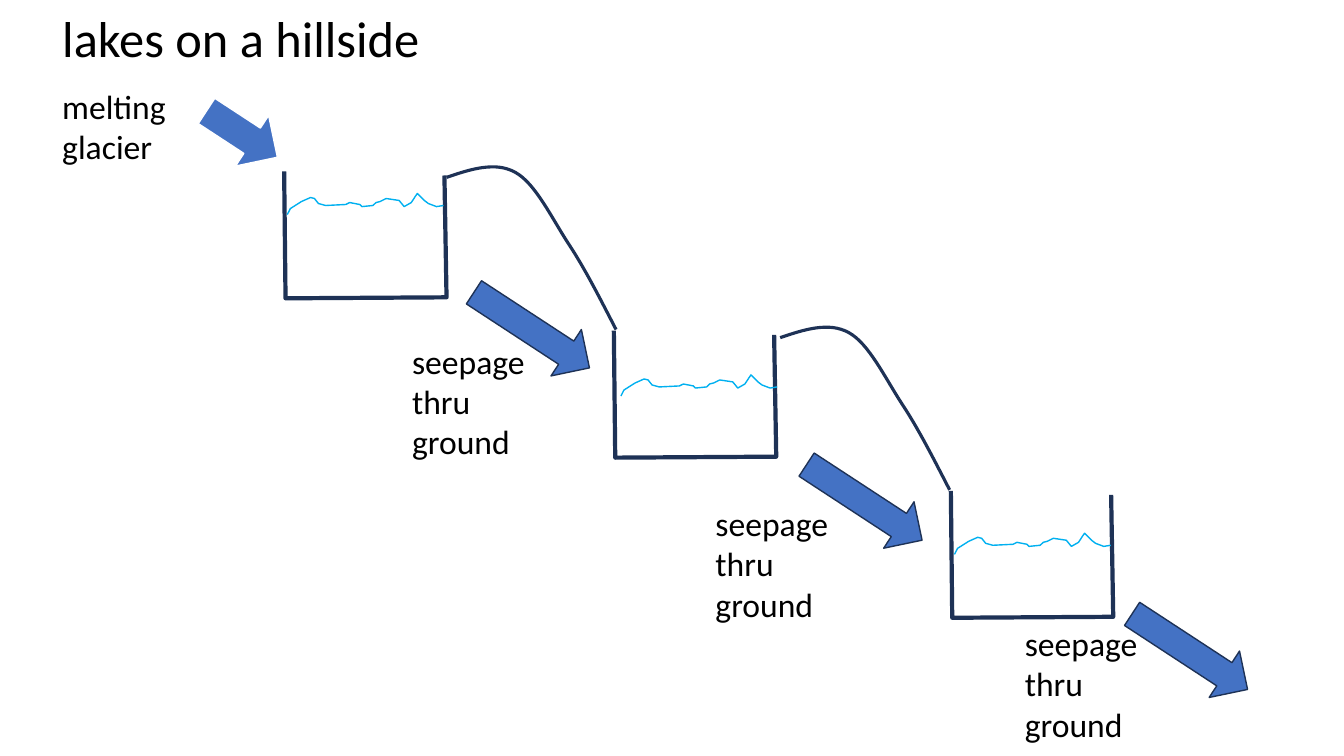
from pptx import Presentation
from pptx.dml.color import RGBColor
from pptx.enum.shapes import MSO_SHAPE as Shape
from pptx.enum.text import MSO_AUTO_SIZE as AutoSize
from pptx.util import Pt

NAVY, BLUE, WATER = "1E3256", "4472C4", "00B0F0"
WHITE, BLACK = "FFFFFF", "000000"

BASIN = [(0, 0), (1, 90.7), (116, 90), (114.5, 3)]
RIPPLES = [
    (0, 15.1), (2.2, 10.8), (10.1, 5.8), (16.6, 2.9), (19.4, 3.6), (22.3, 7.2),
    (27.4, 8.6), (41.8, 7.9), (44.6, 6.5), (51.8, 7.9), (53.3, 9.4), (61.2, 8.6),
    (63.4, 6.5), (66.2, 5.8), (70.6, 3.6), (79.9, 5), (83.5, 9.4), (88.6, 6.5),
    (91.4, 2.2), (92.9, 0), (97.9, 5), (100.8, 7.2), (106.6, 9.4), (111.6, 8.6),
]
STREAM = [
    (0, 0), (17.3, -5.8), (34.6, -11.5), (49, -3.6), (63.4, 4.3),
    (74.9, 28.8), (87.1, 47.5), (99.4, 66.2), (110.2, 87.8), (121, 108.7),
]

BASIN_ORIGINS = [(203, 122.4), (438.5, 236.2), (679.2, 350.6)]
RIPPLE_ORIGINS = [(205.2, 138.2), (443.5, 267.8), (681.8, 380.9)]
STREAM_ORIGINS = [(319, 126.7), (557.3, 241.2)]
SEEPAGE_ARROWS = [(330.5, 216), (568.1, 339.1), (800.6, 445.7)]
SEEPAGE_LABELS = [(287.3, 239.8), (504, 355.7), (725, 441.4)]


def color(value):
    return RGBColor.from_string(value)


def set_line(shape, line_color, width):
    shape.shadow.inherit = False
    shape.line.color.rgb = color(line_color)
    shape.line.width = Pt(width)


def bezier_points(controls, steps=16):
    points = [controls[0]]
    for first in range(0, len(controls) - 1, 3):
        a, b, c, d = controls[first:first + 4]
        for step in range(1, steps + 1):
            t = step / steps
            u = 1 - t
            weights = (u ** 3, 3 * u * u * t, 3 * u * t * t, t ** 3)
            points.append(tuple(
                sum(w * v for w, v in zip(weights, values))
                for values in zip(a, b, c, d)
            ))
    return points


def add_outline(slide, origin, points, line_color, width):
    left, top = origin
    vertices = [(Pt(left + x), Pt(top + y)) for x, y in points]
    builder = slide.shapes.build_freeform(*vertices[0])
    builder.add_line_segments(vertices[1:], close=False)
    shape = builder.convert_to_shape()
    shape.fill.background()
    set_line(shape, line_color, width)


def add_arrow(slide, origin, width, height, line_color):
    left, top = origin
    shape = slide.shapes.add_shape(
        Shape.RIGHT_ARROW, Pt(left), Pt(top), Pt(width), Pt(height))
    shape.rotation = 33.2
    shape.fill.solid()
    shape.fill.fore_color.rgb = color(BLUE)
    set_line(shape, line_color, 1)


def add_text(slide, origin, width, height, text, size):
    left, top = origin
    box = slide.shapes.add_textbox(Pt(left), Pt(top), Pt(width), Pt(height))
    text_frame = box.text_frame
    text_frame.word_wrap = True
    text_frame.auto_size = AutoSize.SHAPE_TO_FIT_TEXT
    text_frame.text = text
    for paragraph in text_frame.paragraphs:
        for run in paragraph.runs:
            run.font.name = "Calibri"
            run.font.size = Pt(size)
            run.font.color.rgb = color(BLACK)


def main():
    presentation = Presentation()
    presentation.slide_width, presentation.slide_height = Pt(960), Pt(540)
    slide = presentation.slides.add_slide(presentation.slide_layouts[6])

    for origin in BASIN_ORIGINS:
        add_outline(slide, origin, BASIN, NAVY, 3)
    for origin in RIPPLE_ORIGINS:
        add_outline(slide, origin, RIPPLES, WATER, 1)
    stream_points = bezier_points(STREAM)
    for origin in STREAM_ORIGINS:
        add_outline(slide, origin, stream_points, NAVY, 2.25)

    add_arrow(slide, (142.6, 74.2), 60.5, 43.2, WHITE)
    for origin in SEEPAGE_ARROWS:
        add_arrow(slide, origin, 98.6, 39.6, NAVY)

    add_text(slide, (37.4, 1.4), 520, 51, "lakes on a hillside", 36)
    add_text(slide, (37.4, 57.6), 177, 65.5, "melting\nglacier", 24)
    for origin in SEEPAGE_LABELS:
        add_text(slide, origin, 177, 94.3, "seepage\nthru\nground", 24)

    presentation.save("out.pptx")


if __name__ == "__main__":
    main()
